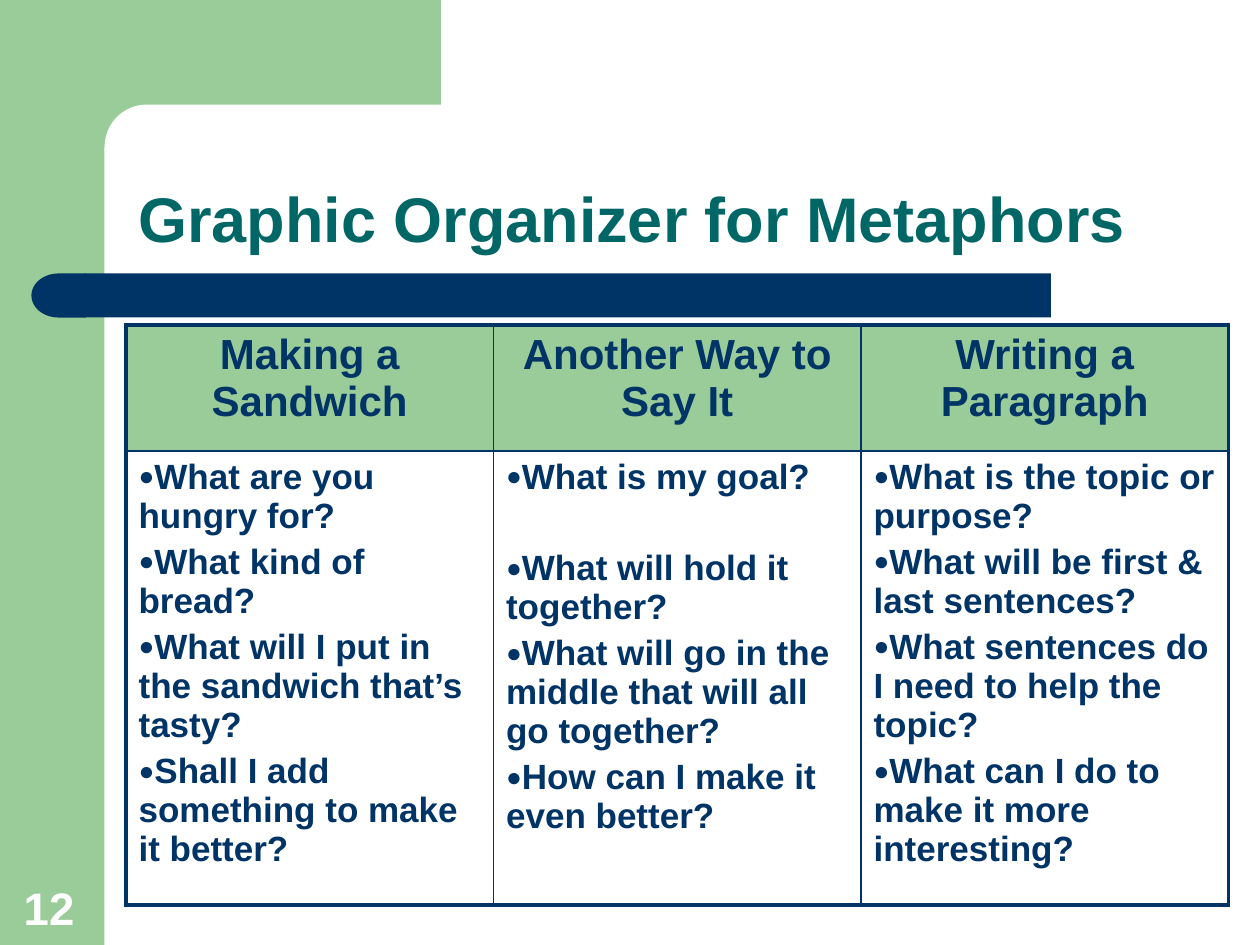
from dataclasses import dataclass

from lxml import etree
from pptx import Presentation
from pptx import util as u
from pptx.dml import color
from pptx.enum import shapes, text
from pptx.oxml import ns

Kind = shapes.MSO_SHAPE
Align = text.PP_ALIGN
Anchor = text.MSO_ANCHOR


@dataclass(frozen=True)
class Theme:
    font: str = "Arial"
    green: str = "99CC99"
    navy: str = "003366"
    teal: str = "006666"
    white: str = "FFFFFF"
    title: int = 36
    page: int = 26
    head: int = 24
    body: int = 20
    thick: float = 2.25
    thin: float = 1


@dataclass(frozen=True)
class Block:
    kind: Kind
    box: tuple
    fill: str
    round: float | None = None
    flip: bool = False


@dataclass(frozen=True)
class Column:
    head: str
    items: tuple
    gaps: tuple = (4, 4, 4, 4)


look = Theme()

blocks = (
    Block(Kind.RECTANGLE, (0, 0, 0.83, 7.5), look.green),
    Block(Kind.RECTANGLE, (0.75, 0, 2.75, 1.17), look.green),
    Block(Kind.ROUNDED_RECTANGLE, (0.83, 0.83, 5.58, 0.67), look.white, round=0.5),
    Block(Kind.RECTANGLE, (0.67, 2.17, 7.67, 0.35), look.navy),
    Block(Kind.FLOWCHART_DELAY, (0.25, 2.17, 0.43, 0.35), look.navy, flip=True),
)

columns = (
    Column("Making a Sandwich", (
        "What are you hungry for?",
        "What kind of bread?",
        "What will I put in the sandwich that’s tasty?",
        "Shall I add something to make it better?",
    )),
    Column("Another Way to Say It", (
        "What is my goal?",
        "What will hold it together?",
        "What will go in the middle that will all go together?",
        "How can I make it even better?",
    ), gaps=(4, 30, 4, 4)),
    Column("Writing a Paragraph", (
        "What is the topic or purpose?",
        "What will be first & last sentences?",
        "What sentences do I need to help the topic?",
        "What can I do to make it more interesting?",
    )),
)


def rgb(code: str) -> color.RGBColor:
    return color.RGBColor.from_string(code)


def place(box: tuple) -> list:
    return [u.Inches(side) for side in box]


def add_tag(root, name: str, **attrs: str):
    return etree.SubElement(root, ns.qn(f"a:{name}"), attrs)


def write(para, words: str, *, size: int, tint: str = look.navy,
          align=Align.LEFT, before: float = 0, line: float = 1,
          bullet: bool = False) -> None:
    para.alignment = align
    para.space_before = u.Pt(before)
    para.line_spacing = line
    run = para.add_run()
    run.text = words
    font = run.font
    font.name, font.size, font.bold = look.font, u.Pt(size), True
    font.color.rgb = rgb(tint)
    if bullet:
        props = para._p.get_or_add_pPr()
        add_tag(add_tag(props, "buClr"), "srgbClr", val=look.navy)
        add_tag(props, "buSzPct", val="75000")
        add_tag(props, "buFont", typeface=look.font)
        add_tag(props, "buChar", char="●")


def add_block(slide, block: Block) -> None:
    shape = slide.shapes.add_shape(block.kind, *place(block.box))
    shape.shadow.inherit = False
    shape.fill.solid()
    shape.fill.fore_color.rgb = rgb(block.fill)
    shape.line.fill.background()
    if block.round is not None:
        shape.adjustments[0] = block.round
    if block.flip:
        shape._element.spPr.get_or_add_xfrm().set("flipH", "1")


def add_label(slide, box: tuple, words: str, **form) -> None:
    frame = slide.shapes.add_textbox(*place(box)).text_frame
    frame.word_wrap = True
    frame.vertical_anchor = Anchor.BOTTOM
    write(frame.paragraphs[0], words, **form)


def add_edges(cell, row: int, col: int, last: int) -> None:
    outer = {"lnL": col == 0, "lnR": col == last, "lnT": row == 0, "lnB": row == 1}
    props = cell._tc.get_or_add_tcPr()
    for spot, (name, edge) in enumerate(outer.items()):
        width = u.Pt(look.thick if edge else look.thin)
        line = add_tag(props, name, w=str(width))
        add_tag(add_tag(line, "solidFill"), "srgbClr", val=look.navy)
        props.insert(spot, line)


def add_grid(slide, box: tuple, heights: tuple) -> None:
    frame = slide.shapes.add_table(len(heights), len(columns), *place(box))
    table = frame.table
    table.horz_banding = table.first_row = False
    for row, height in zip(table.rows, heights):
        row.height = u.Inches(height)
    for col, data in enumerate(columns):
        table.columns[col].width = u.Inches(box[2] / len(columns))
        head, body = table.cell(0, col), table.cell(1, col)
        head.fill.solid()
        head.fill.fore_color.rgb = rgb(look.green)
        body.fill.background()
        write(head.text_frame.paragraphs[0], data.head, size=look.head,
              align=Align.CENTER, before=4.8)
        frame = body.text_frame
        for spot, (item, gap) in enumerate(zip(data.items, data.gaps)):
            para = frame.add_paragraph() if spot else frame.paragraphs[0]
            write(para, item, size=look.body, before=gap, bullet=True)
        for row, cell in enumerate((head, body)):
            add_edges(cell, row, col, len(columns) - 1)


def main() -> None:
    deck = Presentation()
    deck.slide_width, deck.slide_height = u.Inches(10), u.Inches(7.5)
    slide = deck.slides.add_slide(deck.slide_layouts[6])
    for block in blocks:
        add_block(slide, block)
    add_label(slide, (0.09, 6.94, 0.64, 0.53), "12", size=look.page, tint=look.white)
    add_label(slide, (1, 0.83, 8.75, 1.25), "Graphic Organizer for Metaphors",
              size=look.title, tint=look.teal, line=0.9)
    add_grid(slide, (1, 2.58, 8.75, 4.37), (1, 3.37))
    deck.save("out.pptx")


if __name__ == "__main__":
    main()
